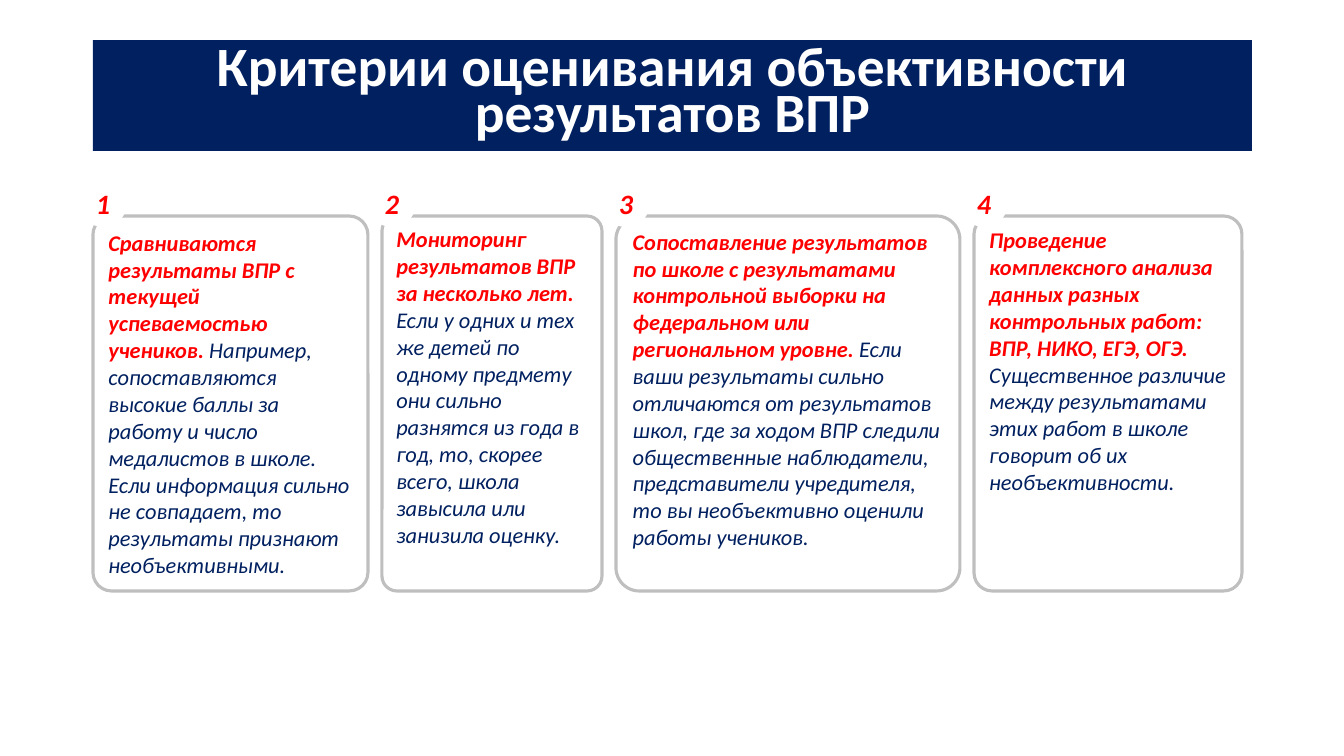
"""Build a slide with four criteria for judging the objectivity of test results."""
from pptx import Presentation
from pptx.dml.color import RGBColor as RGB
from pptx.enum.shapes import MSO_SHAPE as SHAPE
from pptx.enum.text import MSO_ANCHOR as ANCHOR, PP_ALIGN as ALIGN
from pptx.util import Pt

PX = 9071.43
COLORS = {"navy": "002060", "red": "FF0000", "white": "FFFFFF", "gray": "BFBFBF"}


def add_box(kind, left, top, width, height, fill=None, line=None):
    box = slide.shapes.add_shape(kind, *(round(n * PX) for n in (left, top, width, height)))
    box.shadow.inherit = False
    if fill:
        box.fill.solid()
        box.fill.fore_color.rgb = RGB.from_string(COLORS[fill])
    else:
        box.fill.background()
    if line:
        box.line.color.rgb = RGB.from_string(COLORS[line])
        box.line.width = Pt(2.25)
    else:
        box.line.fill.background()
    box.text_frame.word_wrap = True
    box.text_frame.vertical_anchor = ANCHOR.MIDDLE
    return box


def style(run, size, color, bold=True, italic=True):
    font = run.font
    font.name, font.size = "Calibri", Pt(size)
    font.bold, font.italic = bold, italic
    font.color.rgb = RGB.from_string(COLORS[color])


deck = Presentation()
deck.slide_width, deck.slide_height = round(1344 * PX), round(756 * PX)
slide = deck.slides.add_slide(deck.slide_layouts[6])

title = add_box(SHAPE.RECTANGLE, 93, 40, 1159, 111, fill="navy")
title.text_frame.text = "Критерии оценивания объективности результатов ВПР"
para = title.text_frame.paragraphs[0]
para.alignment, para.line_spacing = ALIGN.CENTER, 0.7
style(para.runs[0], 39.6, "white", italic=False)

CARDS = [
    (275, ANCHOR.MIDDLE,
     "Сравниваются результаты ВПР с текущей успеваемостью учеников. ",
     "Например, сопоставляются высокие баллы за работу и число медалистов в школе. "
     "Если информация сильно не совпадает, то результаты признают необъективными."),
    (220, ANCHOR.TOP,
     "Мониторинг результатов ВПР за несколько лет.",
     " Если у одних и тех же детей по одному предмету они сильно разнятся из года в год, "
     "то, скорее всего, школа завысила или занизила оценку."),
    (344, ANCHOR.TOP,
     "Сопоставление результатов по школе с результатами контрольной выборки "
     "на федеральном или региональном уровне. ",
     "Если ваши результаты сильно отличаются от результатов школ, где за ходом ВПР следили "
     "общественные наблюдатели, представители учредителя, то вы необъективно оценили "
     "работы учеников."),
    (268, ANCHOR.TOP,
     "Проведение комплексного анализа данных разных контрольных работ: ВПР, НИКО, ЕГЭ, ОГЭ. ",
     "Существенное различие между результатами этих работ в школе говорит "
     "об их необъективности."),
]
GAP = 14
left = 93
for number, (width, anchor, lead, detail) in enumerate(CARDS, 1):
    card = add_box(SHAPE.ROUNDED_RECTANGLE, left, 216, width, 375, line="gray")
    card.adjustments[0] = 0.068
    card.text_frame.vertical_anchor = anchor
    para = card.text_frame.paragraphs[0]
    para.alignment = ALIGN.LEFT
    for text, color, bold in ((lead, "red", True), (detail, "navy", False)):
        run = para.add_run()
        run.text = text
        style(run, 16, color, bold)

    badge = add_box(SHAPE.OVAL, left - GAP, 179, 48, 48, fill="white")
    badge.text_frame.text = str(number)
    para = badge.text_frame.paragraphs[0]
    para.alignment = ALIGN.CENTER
    style(para.runs[0], 20, "red")
    left += width + GAP

deck.save("out.pptx")
